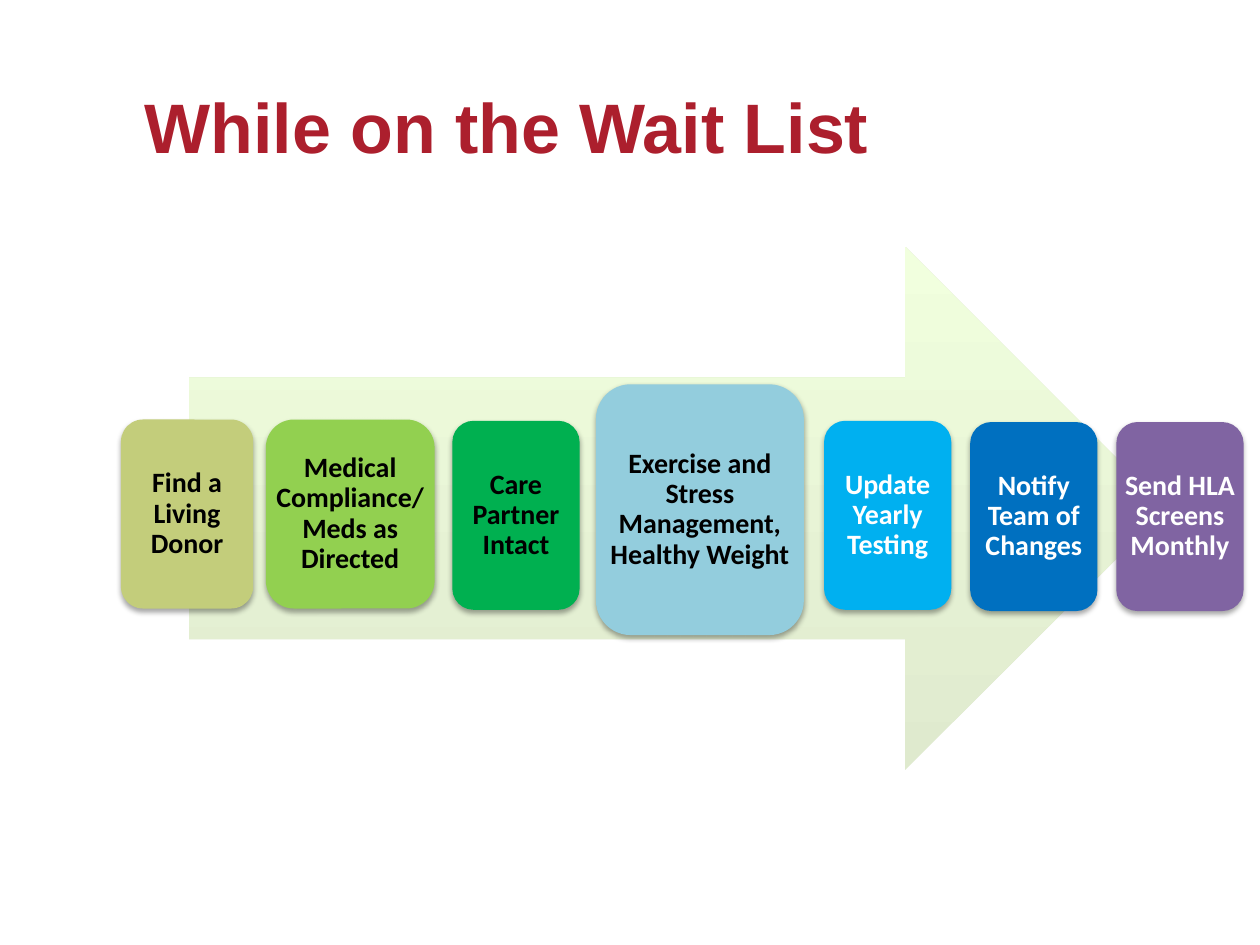
from dataclasses import dataclass

from lxml.etree import SubElement
from pptx import Presentation
from pptx.dml.color import RGBColor
from pptx.enum.shapes import MSO_SHAPE
from pptx.enum.text import MSO_ANCHOR, PP_ALIGN
from pptx.oxml.ns import qn
from pptx.util import Inches, Pt


@dataclass(frozen=True)
class Theme:
    title: str = "AC1F2D"
    dark: str = "000000"
    light: str = "FFFFFF"
    arrow_bottom: str = "DFEACE"
    arrow_top: str = "F1FFDE"
    title_font: str = "Arial"
    step_font: str = "Calibri"
    title_size: int = 40
    step_size: int = 16


THEME = Theme()
WIDE_INSET, NARROW_INSET = 0.05, 0.01

# wording, left, top, width, height, fill, text colour, inset
STEPS = [
    ("Find a Living Donor", 0.96, 3.33, 1.05, 1.5, "C3CD7B", THEME.dark, WIDE_INSET),
    ("Medical Compliance/ Meds as Directed", 2.11, 3.33, 1.34, 1.5, "92D050", THEME.dark, NARROW_INSET),
    ("Care Partner Intact", 3.59, 3.34, 1.01, 1.5, "00B050", THEME.dark, WIDE_INSET),
    ("Exercise and Stress Management, Healthy Weight", 4.73, 3.05, 1.65, 1.99, "93CDDD", THEME.dark, NARROW_INSET),
    ("Update Yearly Testing", 6.54, 3.34, 1.01, 1.5, "00B0F0", THEME.light, WIDE_INSET),
    ("Notify Team of Changes", 7.7, 3.35, 1.01, 1.5, "0070C0", THEME.light, WIDE_INSET),
    ("Send HLA Screens Monthly", 8.86, 3.35, 1.01, 1.5, "8064A2", THEME.light, NARROW_INSET),
]


def rgb(color):
    return RGBColor.from_string(color)


def write_text(shape, text, *, font, size, color, align, anchor, inset_x, inset_y):
    frame = shape.text_frame
    frame.word_wrap = True
    frame.vertical_anchor = anchor
    frame.margin_left = frame.margin_right = Inches(inset_x)
    frame.margin_top = frame.margin_bottom = Inches(inset_y)
    paragraph = frame.paragraphs[0]
    paragraph.alignment = align
    paragraph.line_spacing = 0.9
    run = paragraph.add_run()
    run.text = text
    run.font.name = font
    run.font.size = Pt(size)
    run.font.bold = True
    run.font.color.rgb = rgb(color)


def add_plain_shape(slide, kind, box):
    """Add a preset shape with neither outline nor shadow."""
    shape = slide.shapes.add_shape(kind, *map(Inches, box))
    shape.shadow.inherit = False
    shape.line.fill.background()
    return shape


def add_soft_shadow(shape):
    effects = shape._element.spPr.find(qn("a:effectLst"))
    shadow = SubElement(effects, qn("a:outerShdw"), blurRad=str(Pt(3.1)),
                        dist=str(Pt(1.8)), dir="5400000", rotWithShape="0")
    color = SubElement(shadow, qn("a:srgbClr"), val=THEME.dark)
    SubElement(color, qn("a:alpha"), val="35000")


def add_title(slide, text, box):
    title = slide.shapes.add_textbox(*map(Inches, box))
    write_text(title, text, font=THEME.title_font, size=THEME.title_size,
               color=THEME.title, align=PP_ALIGN.LEFT, anchor=MSO_ANCHOR.BOTTOM,
               inset_x=0.1, inset_y=0)


def add_arrow(slide, box):
    arrow = add_plain_shape(slide, MSO_SHAPE.RIGHT_ARROW, box)
    arrow.fill.gradient()
    arrow.fill.gradient_angle = 90
    colors = (THEME.arrow_bottom, THEME.arrow_top)
    for position, (stop, color) in enumerate(zip(arrow.fill.gradient_stops, colors)):
        stop.position = position
        stop.color.rgb = rgb(color)


def add_step(slide, text, box, fill, color, inset):
    step = add_plain_shape(slide, MSO_SHAPE.ROUNDED_RECTANGLE, box)
    step.fill.solid()
    step.fill.fore_color.rgb = rgb(fill)
    add_soft_shadow(step)
    write_text(step, text, font=THEME.step_font, size=THEME.step_size,
               color=color, align=PP_ALIGN.CENTER, anchor=MSO_ANCHOR.MIDDLE,
               inset_x=inset, inset_y=inset)


def main():
    deck = Presentation()
    deck.slide_width, deck.slide_height = Inches(10), Inches(7.5)
    slide = deck.slides.add_slide(deck.slide_layouts[6])
    add_title(slide, "While on the Wait List", (1.05, 0.42, 8.32, 0.92))
    add_arrow(slide, (1.5, 1.96, 7.76, 4.15))
    for text, left, top, width, height, fill, color, inset in STEPS:
        add_step(slide, text, (left, top, width, height), fill, color, inset)
    deck.save("out.pptx")


if __name__ == "__main__":
    main()
